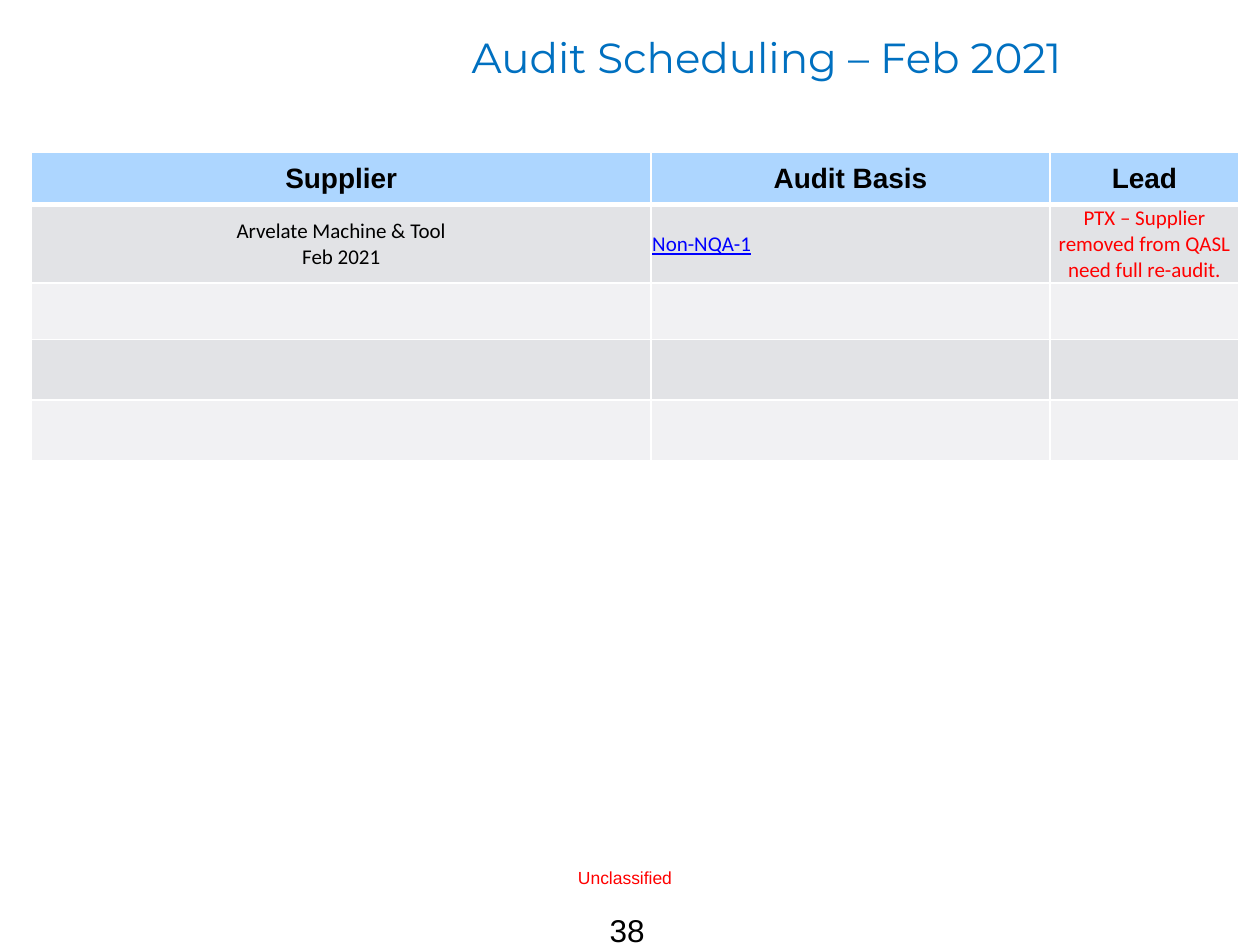
from lxml import etree
from pptx import Presentation
from pptx import util as u
from pptx.dml.color import RGBColor
from pptx.enum import text
from pptx.oxml.ns import qn

COLORS = {
    "white": "FFFFFF", "black": "000000", "title": "0070C0", "header": "ADD6FF",
    "dark band": "E2E3E6", "light band": "F1F1F3", "link": "0000FF", "alert": "FF0000",
}
CENTER, LEFT = text.PP_ALIGN.CENTER, text.PP_ALIGN.LEFT

TITLE = "Audit Scheduling – Feb 2021"
HEADERS = ["Supplier", "Audit Basis", "Lead"]
AUDIT = [
    (["Arvelate Machine & Tool", "Feb 2021"], "black", CENTER, {}),
    (["Non-NQA-1"], "link", LEFT, {"underline": True}),
    (["PTX – Supplier removed from QASL need full re-audit."], "alert", CENTER, {}),
]
COLUMN_WIDTHS = [354, 228, 108]
ROW_HEIGHTS = [30, 32.4, 32.4, 34.6, 34.6]
TABLE_LEFT, TABLE_TOP = 18, 87
LABELS = [
    ("38", (341.3, 517, 36.7, 28.8), 18, "black", False, LEFT),
    ("Unclassified", (246.2, 491.8, 221.8, 36), 10, "alert", True, CENTER),
]
HEADER_MARGINS = {"margin_left": 5, "margin_top": 0, "margin_right": 5, "margin_bottom": 0}
BODY_MARGINS = {"margin_left": 0.72, "margin_top": 0.72, "margin_right": 0.72, "margin_bottom": 0}


def color(name):
    return RGBColor.from_string(COLORS[name])


def apply(target, values):
    for name, value in values.items():
        setattr(target, name, value)


def write(frame, lines, color_name, align, font):
    frame.text = "\n".join(lines)
    for paragraph in frame.paragraphs:
        paragraph.alignment = align
        for run in paragraph.runs:
            apply(run.font, font)
            run.font.color.rgb = color(color_name)


def add_borders(cell, bottom_width):
    properties = cell._tc.get_or_add_tcPr()
    for side, width in {"L": 1, "R": 1, "T": 1, "B": bottom_width}.items():
        line = etree.SubElement(properties, qn(f"a:ln{side}"), w=str(u.Pt(width)))
        fill = etree.SubElement(line, qn("a:solidFill"))
        etree.SubElement(fill, qn("a:srgbClr"), val=COLORS["white"])


def add_title(slide):
    title = slide.shapes.title
    apply(title, {"left": u.Pt(156), "top": u.Pt(14.4), "width": u.Pt(564), "height": u.Pt(36)})
    apply(title.text_frame, {"word_wrap": True, "vertical_anchor": text.MSO_ANCHOR.MIDDLE})
    write(title.text_frame, [TITLE], "title", CENTER, {"name": "Montserrat", "size": u.Pt(24)})


def add_schedule(slide):
    size = len(ROW_HEIGHTS), len(COLUMN_WIDTHS)
    table = slide.shapes.add_table(
        *size, u.Pt(TABLE_LEFT), u.Pt(TABLE_TOP),
        u.Pt(sum(COLUMN_WIDTHS)), u.Pt(sum(ROW_HEIGHTS))).table
    for column, width in zip(table.columns, COLUMN_WIDTHS):
        column.width = u.Pt(width)
    for index, (row, height) in enumerate(zip(table.rows, ROW_HEIGHTS)):
        row.height = u.Pt(height)
        band = "header" if index == 0 else "dark band" if index % 2 else "light band"
        for cell in row.cells:
            add_borders(cell, 3 if index == 0 else 1)
            cell.fill.solid()
            cell.fill.fore_color.rgb = color(band)

    header_font = {"name": "Arial", "size": u.Pt(16), "bold": True}
    body_font = {"name": "Calibri", "size": u.Pt(12), "bold": False}
    headers = [([header], "black", CENTER, {}) for header in HEADERS]
    for index, (contents, font, margins) in enumerate([
            (headers, header_font, HEADER_MARGINS), (AUDIT, body_font, BODY_MARGINS)]):
        for cell, (lines, color_name, align, extra) in zip(table.rows[index].cells, contents):
            apply(cell, {name: u.Pt(value) for name, value in margins.items()})
            cell.vertical_anchor = text.MSO_ANCHOR.MIDDLE
            write(cell.text_frame, lines, color_name, align, {**font, **extra})


def add_labels(slide):
    for label, box, size, color_name, wrap, align in LABELS:
        frame = slide.shapes.add_textbox(*map(u.Pt, box)).text_frame
        frame.word_wrap = wrap
        write(frame, [label], color_name, align, {"name": "Arial", "size": u.Pt(size)})


def main():
    presentation = Presentation()
    apply(presentation, {"slide_width": u.Pt(720), "slide_height": u.Pt(540)})
    slide = presentation.slides.add_slide(presentation.slide_layouts[5])
    slide.background.fill.solid()
    slide.background.fill.fore_color.rgb = color("white")
    add_title(slide)
    add_schedule(slide)
    add_labels(slide)
    presentation.save("out.pptx")


if __name__ == "__main__":
    main()
